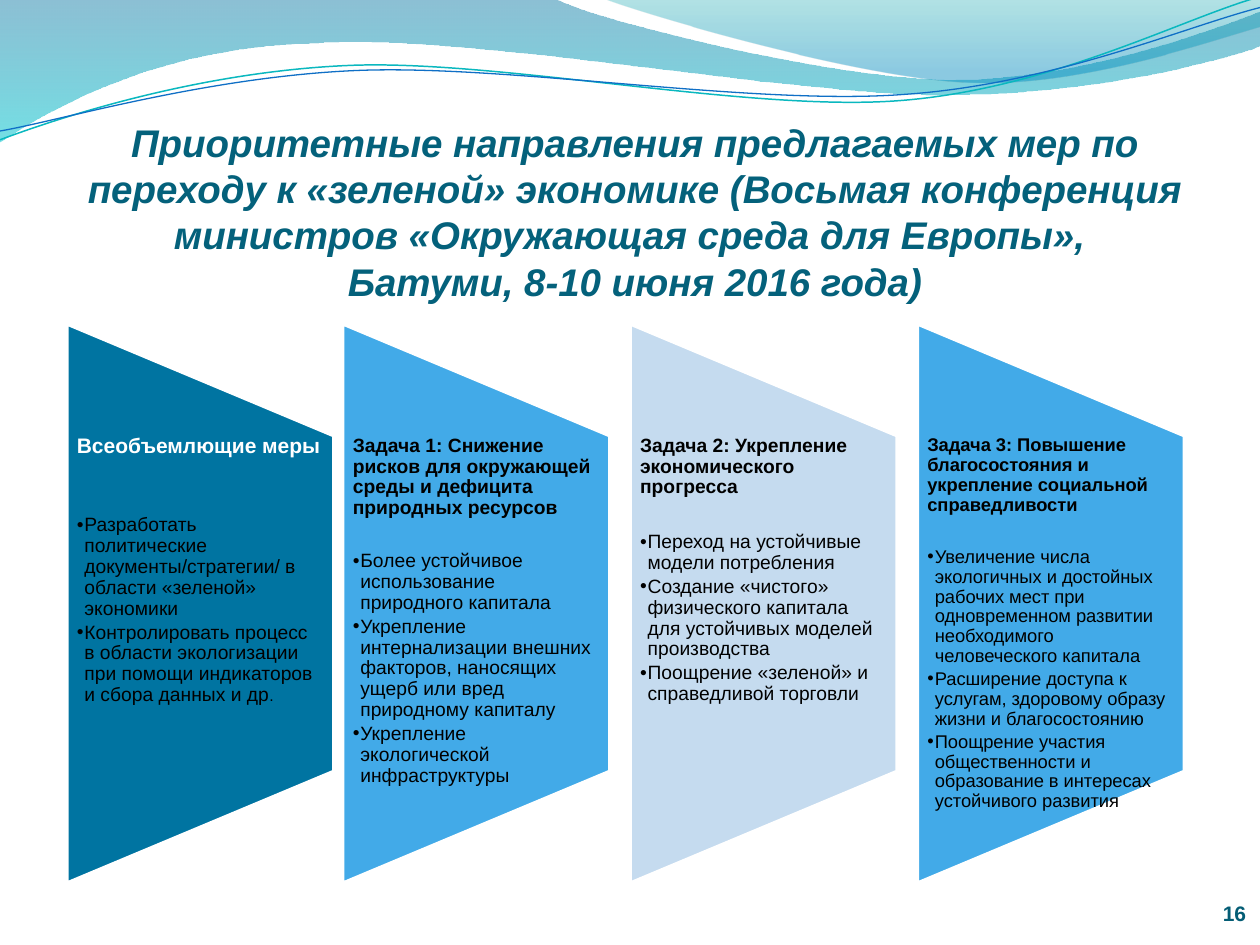
from lxml import etree
from pptx import Presentation
from pptx import util as u
from pptx.dml.color import RGBColor
from pptx.enum import shapes, text
from pptx.oxml.ns import qn

# ---- Content ----
COLORS = {"title": "04617B", "number": "045D75", "white": "FFFFFF", "black": "000000",
          "deep": "0074A1", "sky": "42AAE8", "pale": "C5DBEF",
          "aqua": "00C6CF", "teal": "00A1A9", "azure": "008BBF",
          "teal line": "0AB8BF", "blue line": "0F6FC6"}
FONT = "Arial"
TITLE = ["Приоритетные направления предлагаемых мер по переходу к «зеленой» экономике "
         "(Восьмая конференция министров «Окружающая среда для Европы», ",
         "Батуми, 8-10 июня 2016 года)"]
PAGE = "16"

# Each bullet is a list of (text, size) runs; "gap" is the space below the heading
PANELS = [
    {"fill": "deep", "ink": "white", "size": 12, "gap": 32.5, "nudge": 0.09, "inset": 0.09,
     "heading": "Всеобъемлющие меры",
     "bullets": [
         [("Разработать политические документы/стратегии/ в области «зеленой» экономики", 11)],
         [("Контролировать процесс в области экологизации при помощи индикаторов "
           "и сбора данных и др", 11), (".", 9)]]},
    {"fill": "sky", "ink": "black", "size": 11, "gap": 18.5, "nudge": 0, "inset": 0.08,
     "heading": "Задача 1: Снижение рисков для окружающей среды и дефицита природных ресурсов",
     "bullets": [
         [("Более устойчивое использование природного капитала", 11)],
         [("Укрепление интернализации внешних факторов, наносящих ущерб или вред "
           "природному капиталу", 11)],
         [("Укрепление экологической инфраструктуры", 11)]]},
    {"fill": "pale", "ink": "black", "size": 11, "gap": 19.5, "nudge": 0, "inset": 0.08,
     "heading": "Задача 2: Укрепление экономического прогресса",
     "bullets": [
         [("Переход на устойчивые модели потребления", 11)],
         [("Создание «чистого» физического капитала для устойчивых моделей производства", 11)],
         [("Поощрение «зеленой» и справедливой торговли", 11)]]},
    {"fill": "sky", "ink": "black", "size": 10.5, "gap": 18.5, "nudge": 0, "inset": 0.07,
     "heading": "Задача 3: Повышение благосостояния и укрепление социальной справедливости",
     "bullets": [
         [("Увеличение числа экологичных и достойных рабочих мест при одновременном "
           "развитии необходимого человеческого капитала", 10.5)],
         [("Расширение доступа к услугам, здоровому образу жизни и благосостоянию", 10.5)],
         [("Поощрение участия общественности и образование в интересах "
           "устойчивого развития", 10.5)]]},
]

# Waves: two numbers are a corner, six numbers are a Bezier curve
WAVES = [
    {"stops": [(0, "deep", 45), (1, "aqua", 55)],
     "route": [(0, 0), (4.4, -0.01), (4.76, 0.17, 6.64, 0.63, 7.58, 0.63),
               (8.53, 0.63, 9.58, 0.26, 10, 0.09), (10.01, 0.36),
               (9.83, 0.44, 8.7, 0.76, 7.46, 0.75), (6.22, 0.75, 3.82, 0.28, 2.57, 0.34),
               (1.29, 0.36, 0.46, 0.83, -0.01, 1.13), (0, 0)]},
    {"stops": [(0, "teal", 30), (0.8, "azure", 45)],
     "route": [(4.79, -0.01), (5.09, 0.11, 6.82, 0.62, 7.69, 0.65),
               (8.56, 0.69, 9.61, 0.32, 10, 0.21), (10, 0), (4.79, -0.01)]},
    {"line": ("teal line", 0.85),
     "route": [(0, 1.11), (0.48, 0.93, 1.58, 0.57, 2.77, 0.52),
               (3.95, 0.47, 5.93, 0.89, 7.13, 0.8), (8.33, 0.71, 9.38, 0.15, 9.98, -0.02)]},
    {"line": ("blue line", 0.75),
     "route": [(0, 1.04), (0.47, 0.96, 1.64, 0.61, 2.83, 0.56),
               (4.03, 0.51, 5.97, 0.84, 7.17, 0.75), (8.36, 0.67, 9.41, 0.21, 10, 0.06)]},
]

# ---- Layout, inches ----
WIDTH, HEIGHT = 10, 7.5
PANEL_LEFT, PANEL_PITCH, PANEL_W = 0.44, 2.28, 2.12
PANEL_TOP, PANEL_H = 2.57, 4.44


def rgb(name):
    return RGBColor.from_string(COLORS[name])


def trace(slide, route, closed):
    """Draw the route, then join each three points of a curve into one Bezier."""
    points = [(u.Inches(x), u.Inches(y))
              for part in route for x, y in zip(part[::2], part[1::2])]
    builder = slide.shapes.build_freeform(*points[0])
    builder.add_line_segments(points[1:], close=closed)
    ribbon = builder.convert_to_shape()
    segments = iter(list(ribbon.element.spPr.iter(qn("a:lnTo"))))
    for part in route[1:]:
        legs = [next(segments) for _ in range(len(part) // 2)]
        if len(legs) == 3:
            curve = etree.Element(qn("a:cubicBezTo"))
            legs[0].addprevious(curve)
            for leg in legs:
                curve.append(leg[0])
                leg.getparent().remove(leg)
    return ribbon


def add_wave(slide, wave):
    ribbon = trace(slide, wave["route"], "stops" in wave)
    ribbon.shadow.inherit = False
    if "line" in wave:
        color, weight = wave["line"]
        ribbon.fill.background()
        ribbon.line.color.rgb, ribbon.line.width = rgb(color), u.Pt(weight)
        return
    ribbon.line.fill.background()
    ribbon.fill.gradient()
    ribbon.fill.gradient_angle = 270
    for stop, (position, color, _) in zip(ribbon.fill.gradient_stops, wave["stops"]):
        stop.position, stop.color.rgb = position, rgb(color)
    inks = ribbon.element.spPr.find(qn("a:gradFill")).iter(qn("a:srgbClr"))
    for ink, (_, _, opacity) in zip(inks, wave["stops"]):
        etree.SubElement(ink, qn("a:alpha")).set("val", str(opacity * 1000))


def add_box(slide, box, insets=(0, 0, 0, 0), anchor=text.MSO_ANCHOR.TOP):
    frame = slide.shapes.add_textbox(*map(u.Inches, box)).text_frame
    frame.word_wrap, frame.vertical_anchor = True, anchor
    (frame.margin_left, frame.margin_top,
     frame.margin_right, frame.margin_bottom) = map(u.Inches, insets)
    return frame


def add_run(para, words, size, color, bold=False, italic=False):
    run = para.add_run()
    run.text = words
    font = run.font
    font.name, font.size, font.bold, font.italic = FONT, u.Pt(size), bold, italic
    font.color.rgb = rgb(color)


def add_bullet(frame, runs):
    para = frame.add_paragraph()
    para.level, para.line_spacing = 1, 0.9
    para.space_after = u.Pt(1.8)
    props = para._p.get_or_add_pPr()
    props.set("marL", str(u.Inches(0.06)))
    props.set("indent", str(-u.Inches(0.06)))
    etree.SubElement(props, qn("a:buFont")).set("typeface", FONT)
    etree.SubElement(props, qn("a:buChar")).set("char", "•")
    for words, size in runs:
        add_run(para, words, size, "black")


def add_panel(slide, column, panel):
    left = PANEL_LEFT + column * PANEL_PITCH + panel["nudge"]
    # The preset is turned on its side, so its width is the panel's height
    shift = (PANEL_H - PANEL_W) / 2
    plate = slide.shapes.add_shape(
        shapes.MSO_SHAPE.FLOWCHART_MANUAL_OPERATION,
        *map(u.Inches, (left - shift, PANEL_TOP + shift, PANEL_H, PANEL_W)))
    plate.rotation = 270
    plate.shadow.inherit = False
    plate.fill.solid()
    plate.fill.fore_color.rgb = rgb(panel["fill"])
    plate.line.color.rgb, plate.line.width = rgb("white"), u.Pt(2)

    # The text keeps to the middle three fifths
    frame = add_box(slide, (left, PANEL_TOP + PANEL_H / 5, PANEL_W, PANEL_H * 0.6),
                    (0.08, 0, panel["inset"], 0))
    heading = frame.paragraphs[0]
    heading.line_spacing, heading.space_after = 0.9, u.Pt(panel["gap"])
    add_run(heading, panel["heading"], panel["size"], panel["ink"], bold=True)
    for runs in panel["bullets"]:
        add_bullet(frame, runs)


def main():
    deck = Presentation()
    deck.slide_width, deck.slide_height = u.Inches(WIDTH), u.Inches(HEIGHT)
    slide = deck.slides.add_slide(deck.slide_layouts[6])

    # Header waves
    for wave in WAVES:
        add_wave(slide, wave)

    # Page number
    number = add_box(slide, (8.67, 6.95, 1.22, 0.4), anchor=text.MSO_ANCHOR.BOTTOM).paragraphs[0]
    number.alignment = text.PP_ALIGN.RIGHT
    add_run(number, PAGE, 12, "number", bold=True)

    # Panels
    for column, panel in enumerate(PANELS):
        add_panel(slide, column, panel)

    # Title
    title = add_box(slide, (0.5, 0.52, 9.08, 1.89), (0, 0.05, 0, 0),
                    text.MSO_ANCHOR.BOTTOM).paragraphs[0]
    title.alignment = text.PP_ALIGN.CENTER
    for row, words in enumerate(TITLE):
        if row:
            title.add_line_break()
        add_run(title, words, 22, "title", bold=True, italic=True)

    deck.save("out.pptx")


if __name__ == "__main__":
    main()
